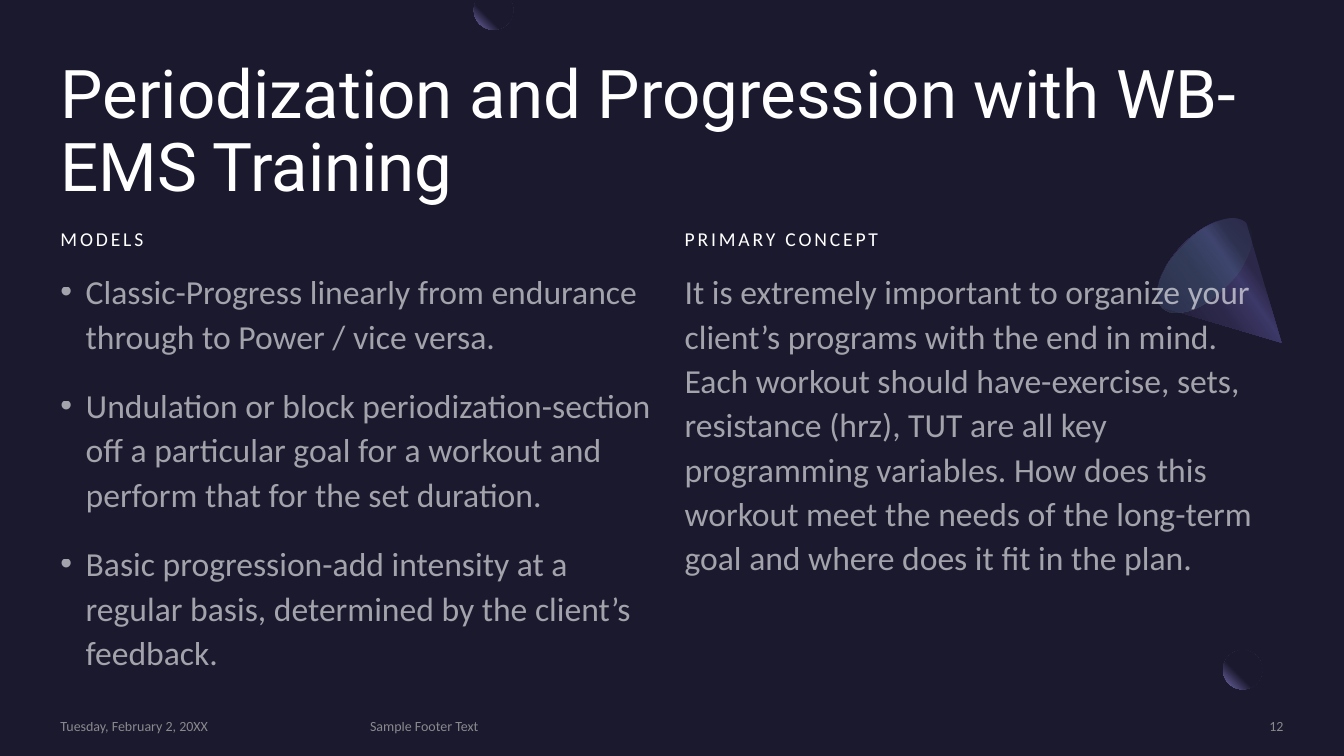
from math import asin, cos, pi, sin

from pptx import Presentation
from pptx.dml.color import RGBColor
from pptx.enum.shapes import MSO_SHAPE as Preset
from pptx.enum.text import MSO_ANCHOR as Anchor, PP_ALIGN as Align
from pptx.oxml import parse_xml
from pptx.oxml.ns import nsdecls, qn
from pptx.util import Inches, Pt

NIGHT = RGBColor(0x1B, 0x19, 0x2E)
LILAC = RGBColor(0x77, 0x71, 0xB2)
DUSK = RGBColor(0x2C, 0x28, 0x4A)
PLUM = RGBColor(0x3C, 0x38, 0x67)
INDIGO = RGBColor(0x45, 0x40, 0x75)
MINT = RGBColor(0x5B, 0xEF, 0xC1)
WHITE = RGBColor(0xFF, 0xFF, 0xFF)
GREY = RGBColor(0xA6, 0xA6, 0xA6)

MARGIN, RIGHT_COLUMN, COLUMN_WIDTH = 0.6, 6.79, 5.95
LABEL_TOP, BODY_TOP, FOOTER_TOP = 1.89, 2.65, 7.12
CORNER_GLOW = (
    '<a:path path="circle"><a:fillToRect l="100000" b="100000"/></a:path>'
)
ORB_STOPS = [(60, NIGHT, 100), (100, LILAC, 100)]
ORB_RADIUS = 0.195

MODELS = [
    "Classic-Progress linearly from endurance through to Power / vice versa.",
    "Undulation or block periodization-section off a particular goal for a "
    "workout and perform that for the set duration.",
    "Basic progression-add intensity at a regular basis, determined by the "
    "client’s feedback.",
]
CONCEPT = (
    "It is extremely important to organize your client’s programs with the end "
    "in mind. Each workout should have-exercise, sets, resistance (hrz), TUT "
    "are all key programming variables. How does this workout meet the needs "
    "of the long-term goal and where does it fit in the plan."
)


def linear(angle):
    return f'<a:lin ang="{angle * 60000}" scaled="0"/>'


def set_alpha(fill, percent):
    color = fill._xPr.find(qn("a:solidFill"))[0]
    color.append(
        parse_xml(f'<a:alpha {nsdecls("a")} val="{percent * 1000}"/>')
    )


def fill_gradient(shape, stops, direction):
    """Fill with (position, colour, opacity) stops, all in percent."""
    stop_xml = "".join(
        f'<a:gs pos="{position * 1000}"><a:srgbClr val="{color}">'
        f'<a:alpha val="{alpha * 1000}"/></a:srgbClr></a:gs>'
        for position, color, alpha in stops
    )
    shape.fill.background()
    properties = shape._element.spPr
    gradient = parse_xml(
        f'<a:gradFill {nsdecls("a")} rotWithShape="1">'
        f"<a:gsLst>{stop_xml}</a:gsLst>{direction}</a:gradFill>"
    )
    properties.replace(properties.find(qn("a:noFill")), gradient)


def make_plain(shape):
    shape.shadow.inherit = False
    shape.line.fill.background()
    return shape


def add_preset(slide, preset, left, top, width, height):
    return make_plain(slide.shapes.add_shape(
        preset, Inches(left), Inches(top), Inches(width), Inches(height)
    ))


def add_outline(slide, points):
    start, *others = [(Inches(x), Inches(y)) for x, y in points]
    builder = slide.shapes.build_freeform(*start)
    builder.add_line_segments(others, close=True)
    return make_plain(builder.convert_to_shape())


def add_corner_orb(slide):
    orb = add_preset(
        slide, Preset.OVAL, 12.13, 6.45, 2 * ORB_RADIUS, 2 * ORB_RADIUS
    )
    fill_gradient(orb, ORB_STOPS, CORNER_GLOW)
    veil = add_preset(slide, Preset.RECTANGLE, 12.52, 6.37, 0.41, 0.39)
    veil.fill.solid()
    veil.fill.fore_color.rgb = NIGHT
    set_alpha(veil.fill, 80)


def add_cone(slide, steps=40):
    center_x, center_y, long_radius = 11.945, 2.63, 0.59
    diagonal = cos(pi / 4)
    points = [(12.71, 3.4)]
    for step in range(steps + 1):
        turn = pi * step / steps
        along = long_radius * cos(turn) * diagonal
        across = long_radius / 2 * sin(turn) * diagonal
        points.append((center_x + along - across, center_y - along - across))
    cone = add_outline(slide, points)
    cone_stops = [
        (30, DUSK, 100), (40, PLUM, 100), (60, DUSK, 100), (100, NIGHT, 100)
    ]
    fill_gradient(cone, cone_stops, linear(145))

    rim = add_preset(
        slide, Preset.OVAL, center_x - long_radius / 2,
        center_y - long_radius, long_radius, 2 * long_radius,
    )
    rim.rotation = 225
    fill_gradient(rim, [(0, INDIGO, 33), (100, MINT, 0)], linear(90))


def add_top_orb(slide, steps=40):
    """Draw the orb that the top edge of the slide cuts off."""
    center_x, center_y = 4.895, 0.1
    first = -asin(center_y / ORB_RADIUS)
    sweep = pi - 2 * first
    turns = [first + sweep * step / steps for step in range(steps + 1)]
    orb = add_outline(slide, [
        (center_x + ORB_RADIUS * cos(turn),
         max(0, center_y + ORB_RADIUS * sin(turn)))
        for turn in turns
    ])
    fill_gradient(orb, ORB_STOPS, CORNER_GLOW)


def add_text(slide, box, texts, size, color=WHITE, alpha=100, font="Calibri",
             anchor=Anchor.TOP, align=Align.LEFT, line_spacing=1.0):
    frame = slide.shapes.add_textbox(*map(Inches, box)).text_frame
    frame.word_wrap = True
    frame.vertical_anchor = anchor
    frame.margin_left = frame.margin_right = 0
    frame.margin_top = frame.margin_bottom = 0
    frame.text = "\n".join(texts)
    for paragraph in frame.paragraphs:
        paragraph.alignment = align
        paragraph.line_spacing = line_spacing
        paragraph.font.size = Pt(size)
        paragraph.font.name = font
        paragraph.font.fill.solid()
        paragraph.font.fill.fore_color.rgb = color
        if alpha < 100:
            set_alpha(paragraph.font.fill, alpha)
    return frame.paragraphs


def space_out(paragraphs):
    for paragraph in paragraphs:
        paragraph.space_before = Pt(10)
        paragraph.space_after = Pt(8)


def add_bullets(paragraphs):
    for paragraph in paragraphs:
        properties = paragraph._p.get_or_add_pPr()
        properties.set("marL", str(Inches(0.25)))
        properties.set("indent", str(-Inches(0.25)))
        run_defaults = properties.find(qn("a:defRPr"))
        for tag in ('buFont typeface="Arial"', 'buChar char="•"'):
            name, attribute = tag.split()
            run_defaults.addprevious(
                parse_xml(f'<a:{name} {nsdecls("a")} {attribute}/>')
            )


def add_column(slide, left, label, texts, height):
    heading = add_text(
        slide, (left, LABEL_TOP, COLUMN_WIDTH, 0.59), [label], 14,
        anchor=Anchor.BOTTOM, line_spacing=1.1,
    )
    heading[0].font._element.set("spc", "200")
    body = add_text(
        slide, (left, BODY_TOP, COLUMN_WIDTH, height), texts, 24,
        alpha=60, line_spacing=1.1,
    )
    space_out([*heading, *body])
    return body


def add_footer(slide, left, width, text, align=Align.LEFT):
    add_text(
        slide, (left, FOOTER_TOP, width, 0.17), [text], 10, GREY, 80,
        anchor=Anchor.MIDDLE, align=align,
    )


def main():
    presentation = Presentation()
    presentation.slide_width = Inches(13.33)
    presentation.slide_height = Inches(7.5)
    slide = presentation.slides.add_slide(presentation.slide_layouts[6])
    slide.background.fill.solid()
    slide.background.fill.fore_color.rgb = NIGHT

    add_corner_orb(slide)
    add_cone(slide)
    add_text(
        slide, (MARGIN, 0.6, 12.14, 1.46),
        ["Periodization and Progression with WB-EMS Training"], 48,
        font="Roboto", line_spacing=0.9,
    )
    add_bullets(add_column(slide, MARGIN, "MODELS", MODELS, 4.24))
    add_column(slide, RIGHT_COLUMN, "PRIMARY CONCEPT", [CONCEPT], 3.84)
    add_footer(slide, MARGIN, 2.88, "Tuesday, February 2, 20XX")
    add_footer(slide, 3.67, 6.98, "Sample Footer Text")
    add_footer(slide, 10.88, 1.85, "12", Align.RIGHT)
    add_top_orb(slide)
    presentation.save("out.pptx")


if __name__ == "__main__":
    main()
